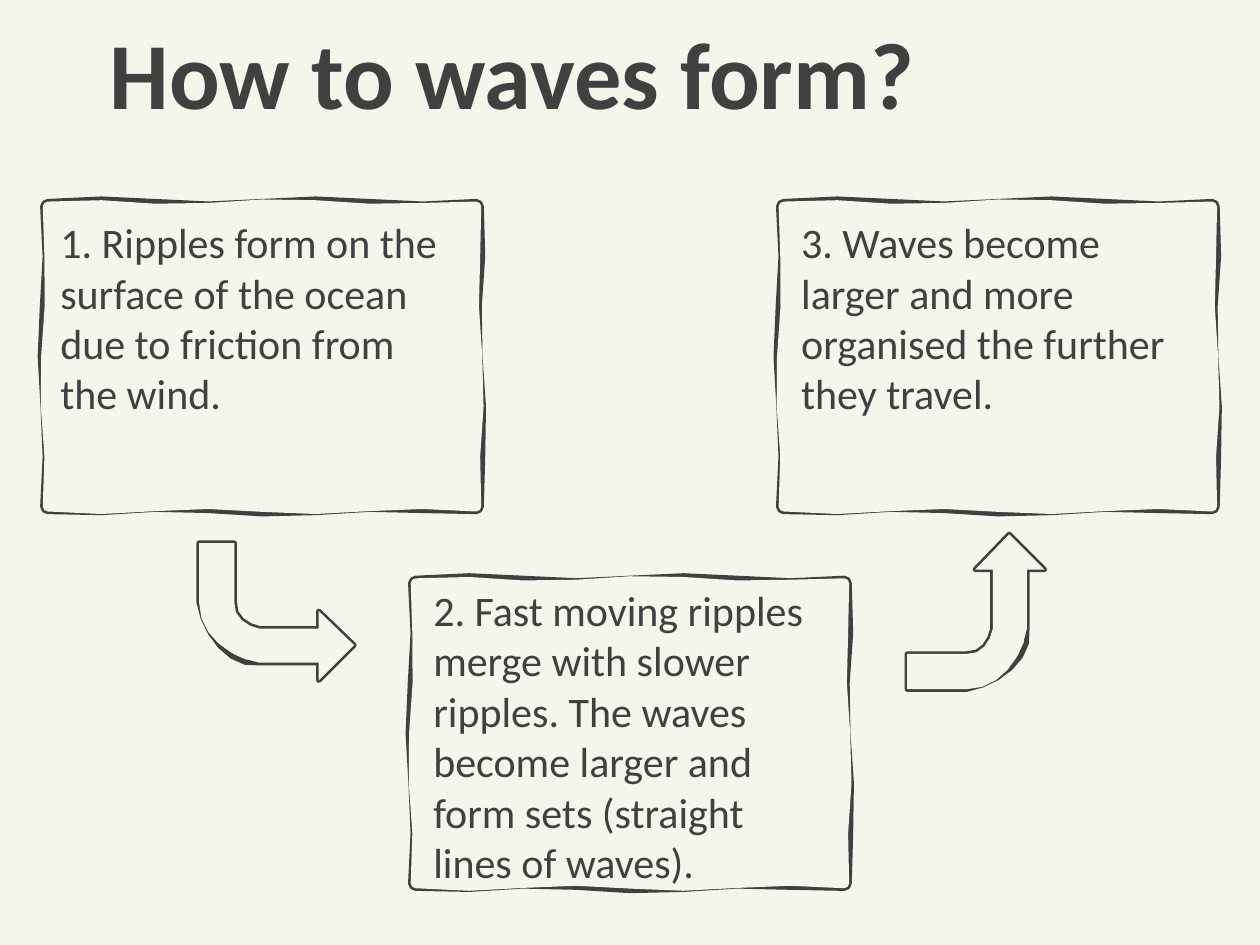
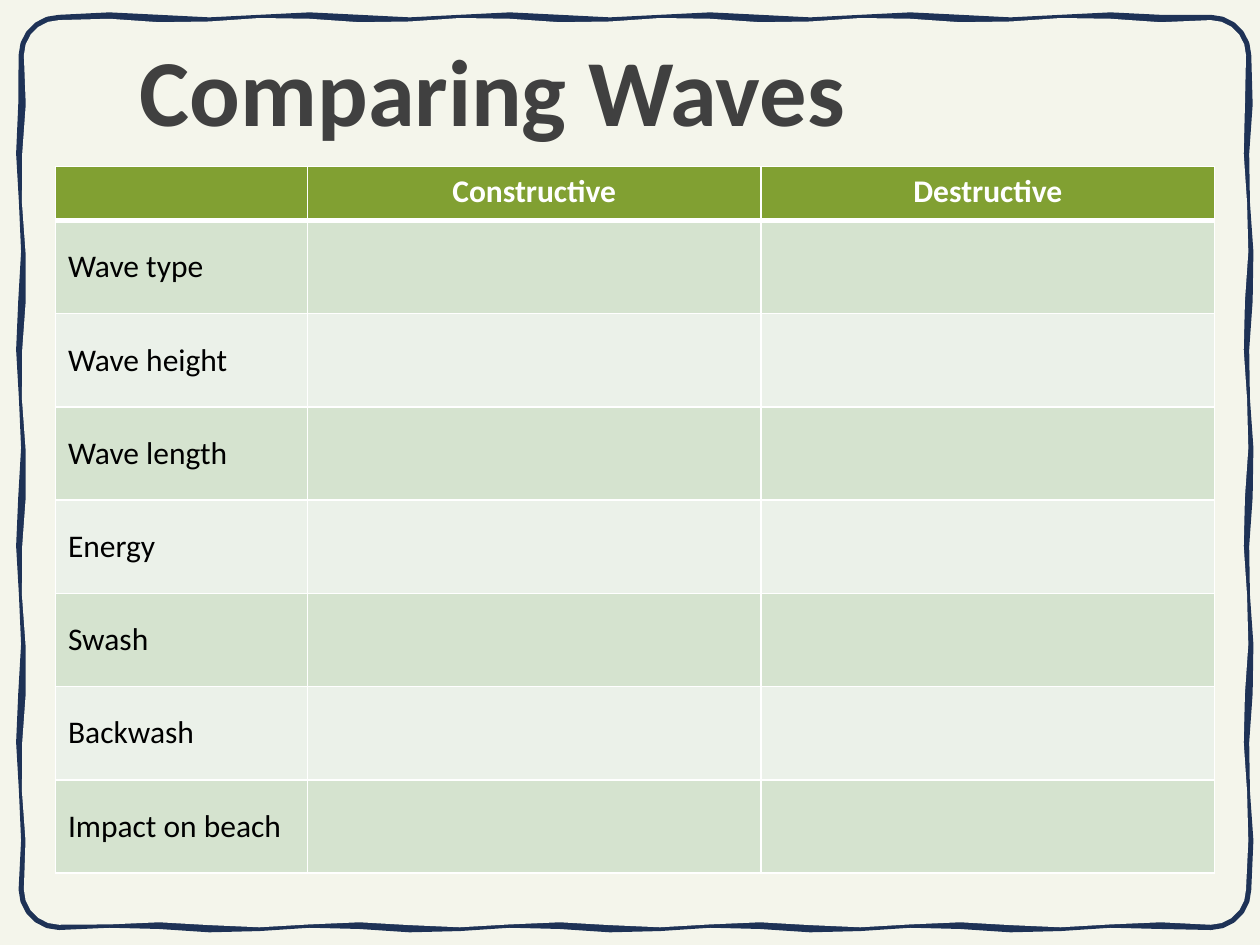
from copy import deepcopy
from math import cos, pi, sin

from lxml import etree
from pptx import Presentation
from pptx.dml.color import RGBColor
from pptx.enum.text import MSO_ANCHOR, MSO_AUTO_SIZE, PP_ALIGN
from pptx.oxml.ns import qn
from pptx.util import Inches, Pt

LEFT, CENTER = PP_ALIGN.LEFT, PP_ALIGN.CENTER
TOP, MIDDLE = MSO_ANCHOR.TOP, MSO_ANCHOR.MIDDLE
GROW = MSO_AUTO_SIZE.SHAPE_TO_FIT_TEXT

FONT = "Calibri"
PAPER, INK, NAVY = "F4F5EB", "404040", "1E3256"
HEADER, BANDS = "81A032", ("D5E3CF", "EBF1E9")
WHITE, BLACK = "FFFFFF", "000000"

WAVE_LENGTH, WAVE_HEIGHT = 1.6, 0.02
CARD_W, CARD_H = 3.48, 2.46
CARDS = [  # card left, top, text inset x, y, text height, text
    (0.34, 1.6, 0.04, 0.07, 1.72,
     "1. Ripples form on the surface of the ocean due to friction from the wind."),
    (3.26, 4.59, 0.08, 0, 2.52,
     "2. Fast moving ripples merge with slower ripples. "
     "The waves become larger and form sets (straight lines of waves)."),
    (6.18, 1.6, 0.08, 0.07, 1.72,
     "3. Waves become larger and more organised the further they travel."),
]
WAVE_KINDS = ["Constructive", "Destructive"]
FEATURES = ["Wave type", "Wave height", "Wave length", "Energy", "Swash",
            "Backwash", "Impact on beach"]


def rgb(color):
    return RGBColor.from_string(color)


def style(p, size, color, bold=False, align=LEFT):
    p.alignment = align
    p.font.name, p.font.size, p.font.bold = FONT, Pt(size), bold
    p.font.color.rgb = rgb(color)


def set_text(sp, text, size, bold=False):
    tf = sp.text_frame
    tf.word_wrap, tf.auto_size, tf.vertical_anchor = True, GROW, TOP
    tf.text = text
    style(tf.paragraphs[0], size, INK, bold)


def place(sp, left, top, width, height):
    sp.left, sp.top = Inches(left), Inches(top)
    sp.width, sp.height = Inches(width), Inches(height)


def add_title(slide, text, left, top):
    title = slide.shapes.title
    place(title, left, top, 10.15, 1.01)
    set_text(title, text, 54, bold=True)
    return title


def add_sketch(slide, left, top, outline, face, color, weight):
    """Stroke the outline, then lay the face over it for a hand-drawn line.

    Both are lists of equally many points relative to left, top.
    """
    contours = [[(Inches(left + x), Inches(top + y)) for x, y in points]
                for points in (outline, face)]
    builder = slide.shapes.build_freeform(*contours[0][0])
    builder.add_line_segments(contours[0][1:], close=True)
    builder.move_to(*contours[1][0])
    builder.add_line_segments(contours[1][1:], close=True)
    sp = builder.convert_to_shape()
    sp.shadow.inherit = False
    sp.fill.solid()
    sp.fill.fore_color.rgb = rgb(PAPER)
    sp.line.color.rgb = rgb(color)
    sp.line.width = Pt(weight)

    stroked = next(sp.element.iter(qn("a:path")))
    filled = deepcopy(stroked)
    stroked.addnext(filled)
    half = len(stroked) // 2
    for step in stroked[half:]:
        stroked.remove(step)
    for step in filled[:half]:
        filled.remove(step)
    stroked.set("fill", "none")
    filled.set("stroke", "0")
    return sp


def wobbly_rect(width, height, radius, phase):
    """Points of a rounded rectangle whose sides waver by a small amount."""
    corners = [(radius, radius), (width - radius, radius),
               (width - radius, height - radius), (radius, height - radius)]
    bends = 2 if radius < 0.1 else 5
    points = []
    for i, (cx, cy) in enumerate(corners):
        for step in range(bends + 1):
            angle = pi + (i + step / bends) * pi / 2
            points.append((cx + radius * cos(angle), cy + radius * sin(angle)))
        nx, ny = corners[(i + 1) % 4]
        normal = 3 * pi / 2 + i * pi / 2
        length = abs(nx - cx) + abs(ny - cy)
        steps = round(4 * length / WAVE_LENGTH)
        for step in range(1, steps):
            t = step / steps
            out = radius + WAVE_HEIGHT * sin(step * pi / 2 + phase + i)
            points.append((cx + (nx - cx) * t + out * cos(normal),
                           cy + (ny - cy) * t + out * sin(normal)))
    return points


def add_sketch_rect(slide, left, top, width, height, radius, color, weight):
    outline, face = (wobbly_rect(width, height, radius, phase) for phase in (0, 1))
    return add_sketch(slide, left, top, outline, face, color, weight)


def curve(a, b, c, d, steps=6):
    """Points of a cubic curve from a to d with handles b and c."""
    return [tuple((1 - t) ** 3 * p + 3 * (1 - t) ** 2 * t * q
                  + 3 * (1 - t) * t ** 2 * r + t ** 3 * s
                  for p, q, r, s in zip(a, b, c, d))
            for t in (i / steps for i in range(steps + 1))]


def bent_arrow(handle_in, handle_out):
    """Points of an arrow going down, then right; handles shape its outer bend."""
    return [(0, 0), *curve((0, 0.47), handle_in, handle_out, (0.48, 0.95)),
            (0.95, 0.95), (0.95, 1.09), (1.23, 0.81), (0.95, 0.54), (0.95, 0.68),
            *curve((0.48, 0.68), (0.38, 0.66), (0.27, 0.59), (0.28, 0.47), steps=4),
            (0.28, 0)]


def add_bent_arrow(slide, left, top, rotation=0):
    sp = add_sketch(slide, left, top, bent_arrow((0.04, 0.72), (0.25, 0.99)),
                    bent_arrow((0, 0.74), (0.25, 0.91)), INK, 3)
    sp.rotation = rotation


def add_card(slide, left, top, dx, dy, text_height, text):
    add_sketch_rect(slide, left, top, CARD_W, CARD_H, 0.04, INK, 3)
    box = slide.shapes.add_textbox(Inches(left + dx), Inches(top + dy),
                                   Inches(3.31), Inches(text_height))
    set_text(box, text, 24)


def set_borders(cell, top, bottom):
    tc_pr = cell._tc.get_or_add_tcPr()
    for side, weight in (("L", 1), ("R", 1), ("T", top), ("B", bottom)):
        ln = etree.SubElement(tc_pr, qn(f"a:ln{side}"), w=str(Pt(weight)))
        fill = etree.SubElement(ln, qn("a:solidFill"))
        etree.SubElement(fill, qn("a:srgbClr"), val=WHITE)


def add_comparison(slide, left, top):
    rows = [["", *WAVE_KINDS]] + [[feature, "", ""] for feature in FEATURES]
    widths, heights = [2, 3.6, 3.6], [0.43] + [0.74] * len(FEATURES)
    table = slide.shapes.add_table(
        len(rows), len(widths), Inches(left), Inches(top),
        Inches(sum(widths)), Inches(sum(heights))).table
    table.horz_banding = False
    for column, width in zip(table.columns, widths):
        column.width = Inches(width)
    for i, (row, height) in enumerate(zip(rows, heights)):
        table.rows[i].height = Inches(height)
        head = i == 0
        for j, text in enumerate(row):
            cell = table.cell(i, j)
            set_borders(cell, 3 if i == 1 else 1, 3 if head else 1)
            cell.fill.solid()
            cell.fill.fore_color.rgb = rgb(HEADER if head else BANDS[(i - 1) % 2])
            cell.vertical_anchor = TOP if head else MIDDLE
            if text:
                cell.text = text
                style(cell.text_frame.paragraphs[0], 18, WHITE if head else BLACK,
                      head, CENTER if head else LEFT)


def formation_slide(slide):
    add_title(slide, "How to waves form?", 0.77, 0.07)
    for card in CARDS:
        add_card(slide, *card)
    add_bent_arrow(slide, 1.58, 4.31)
    add_bent_arrow(slide, 7.13, 4.31, rotation=270)


def comparison_slide(slide):
    title = add_title(slide, "Comparing Waves", 1.01, 0.2)
    frame = add_sketch_rect(slide, 0.19, 0.16, 9.7, 7.18, 0.28, NAVY, 6)
    title.element.addprevious(frame.element)
    add_comparison(slide, 0.44, 1.32)


def main():
    prs = Presentation()
    prs.slide_width, prs.slide_height = Inches(10), Inches(7.5)
    background = prs.slide_master.background.fill
    background.solid()
    background.fore_color.rgb = rgb(PAPER)
    title_only = prs.slide_layouts[5]
    for build in (formation_slide, comparison_slide):
        build(prs.slides.add_slide(title_only))
    prs.save("out.pptx")


if __name__ == "__main__":
    main()
